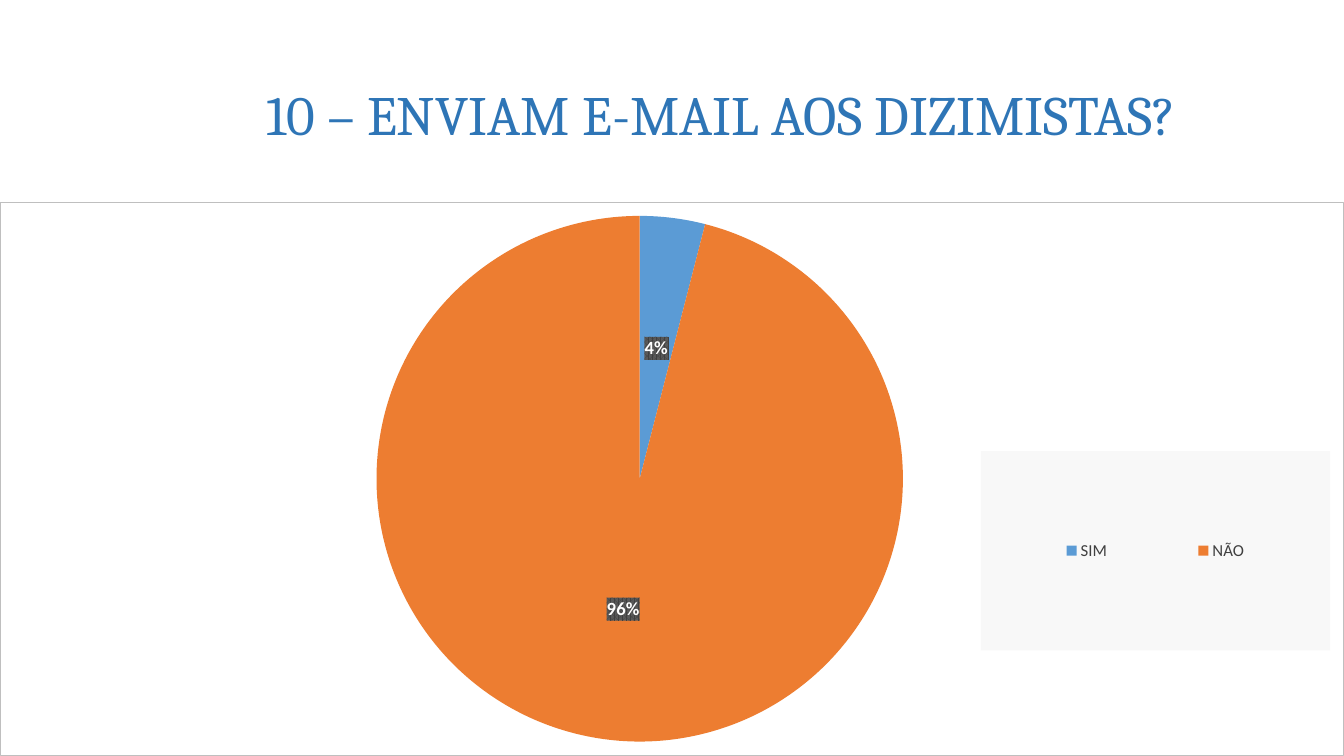
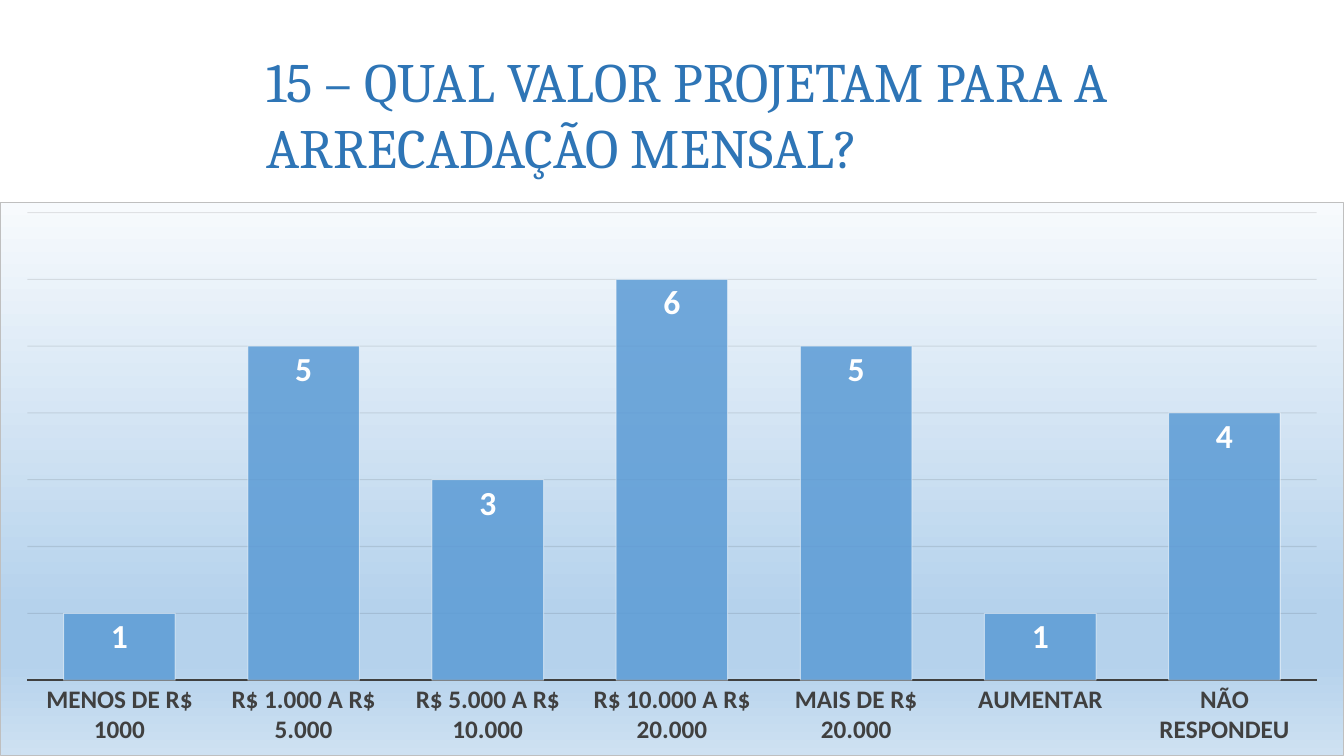
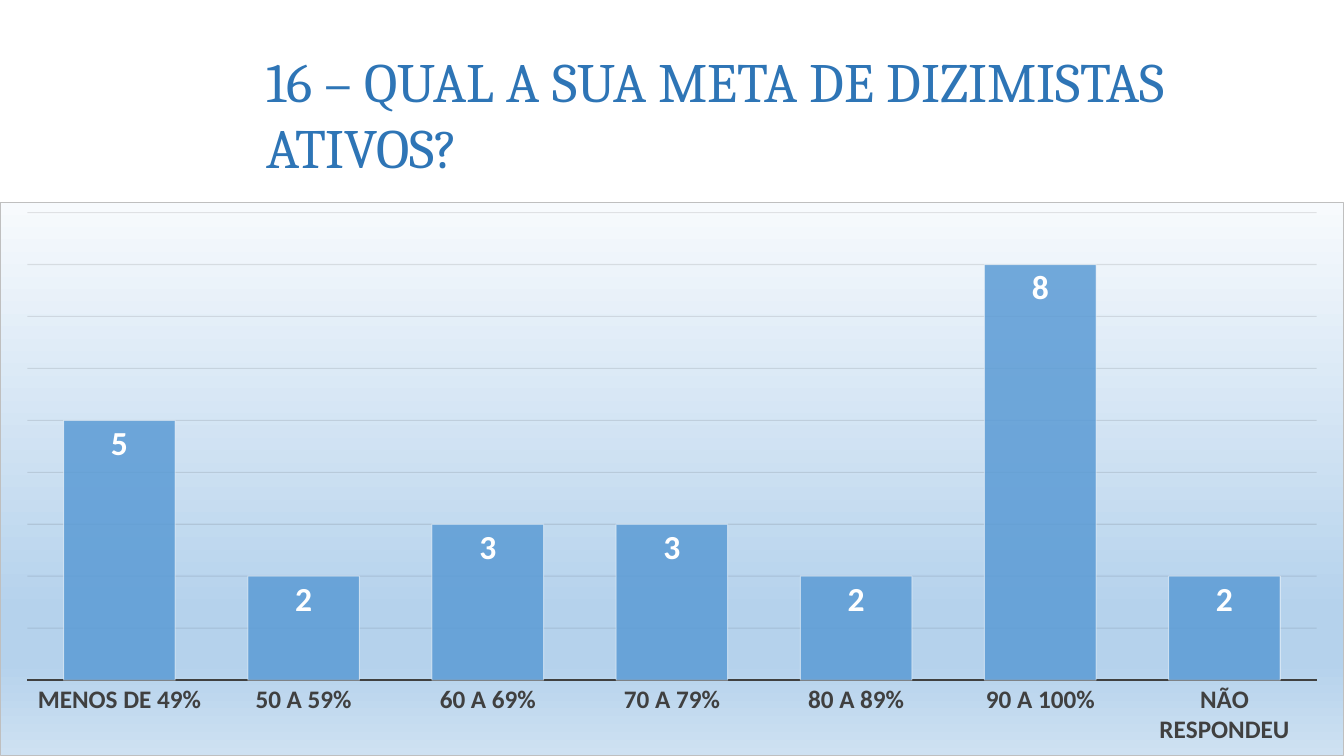
from dataclasses import dataclass

from pptx import Presentation
from pptx.chart.chart import Chart
from pptx.chart.data import CategoryChartData
from pptx.dml.color import RGBColor
from pptx.enum import chart as ch, text
from pptx.oxml import parse_xml
from pptx.oxml.ns import nsdecls
from pptx.slide import Slide
from pptx.util import Inches, Pt

BODY, HEAD = "Calibri", "Cambria"
TITLE, BLUE, ORANGE = "2E75B6", "5B9BD5", "ED7D31"
WHITE, BLACK, DARK, EDGE = "FFFFFF", "000000", "404040", "BFBFBF"
STOPS = [(0, "F7FAFD"), (74, "B5D2EC"), (83, "B5D2EC"), (100, "CEE1F2")]


@dataclass
class Survey:
    title: str
    kind: ch.XL_CHART_TYPE
    data: dict[str, int]


PIE, BARS = ch.XL_CHART_TYPE.PIE, ch.XL_CHART_TYPE.COLUMN_CLUSTERED
SURVEYS = [
    Survey("10 – ENVIAM E-MAIL AOS DIZIMISTAS?", PIE, {"SIM": 4, "NÃO": 96}),
    Survey("15 – QUAL VALOR PROJETAM PARA A ARRECADAÇÃO MENSAL?", BARS, {
        "MENOS DE R$ 1000": 1, "R$ 1.000 A R$ 5.000": 5,
        "R$ 5.000 A R$ 10.000": 3, "R$ 10.000 A R$ 20.000": 6,
        "MAIS DE R$ 20.000": 5, "AUMENTAR": 1, "NÃO RESPONDEU": 4}),
    Survey("16 – QUAL A SUA META DE DIZIMISTAS ATIVOS?", BARS, {
        "MENOS DE 49%": 5, "50 A 59%": 2, "60 A 69%": 3, "70 A 79%": 3,
        "80 A 89%": 2, "90 A 100%": 8, "NÃO RESPONDEU": 2}),
]


def rgb(code: str) -> RGBColor:
    return RGBColor.from_string(code)


def style(font, size: float, color: str, bold: bool = False, face: str = BODY) -> None:
    font.size, font.name, font.bold = Pt(size), face, bold
    font.color.rgb = rgb(color)


def rule(line, color: str, width: float) -> None:
    line.color.rgb, line.width = rgb(color), Pt(width)


def hue(code: str, alpha: int = 100) -> str:
    return f'<a:srgbClr val="{code}"><a:alpha val="{alpha * 1000}"/></a:srgbClr>'


def solid(code: str, alpha: int = 100) -> str:
    return f"<a:solidFill>{hue(code, alpha)}</a:solidFill>"


def props(inner: str):
    return parse_xml(f'<c:spPr {nsdecls("c", "a")}>{inner}</c:spPr>')


def fade(chart: Chart, query: str, alpha: int) -> None:
    """Make the colours found by the query partly transparent."""
    for node in chart.element.xpath(query):
        node.append(parse_xml(f'<a:alpha {nsdecls("a")} val="{alpha * 1000}"/>'))


def layout(x: float, y: float, w: float, h: float, inner: bool = False):
    """Place a chart part by shares of the chart's size."""
    target = '<c:layoutTarget val="inner"/>' if inner else ""
    spots = "".join(f'<c:{k} val="{v}"/>' for k, v in zip("xywh", (x, y, w, h)))
    return parse_xml(
        f'<c:layout {nsdecls("c")}><c:manualLayout>{target}<c:xMode val="edge"/>'
        f'<c:yMode val="edge"/>{spots}</c:manualLayout></c:layout>')


def frame(chart: Chart, fill: str, *area: float) -> None:
    """Fill and outline the chart and place its plot area."""
    edge = f'<a:ln w="{Pt(0.75)}">{solid(EDGE)}</a:ln>'
    chart.element.xpath("c:chart")[0].addnext(props(fill + edge))
    plot = chart.element.xpath("c:chart/c:plotArea")[0]
    for old in plot.xpath("c:layout"):
        plot.remove(old)
    plot.insert(0, layout(*area, inner=True))


def label(chart: Chart, size: float, spot: ch.XL_LABEL_POSITION):
    plot = chart.plots[0]
    plot.has_data_labels = True
    labels = plot.data_labels
    style(labels.font, size, WHITE, True)
    labels.position = spot
    return labels


def draw_pie(chart: Chart) -> None:
    chart.plots[0].vary_by_categories = True
    for i, color in enumerate((BLUE, ORANGE)):
        fill = chart.series[0].points[i].format.fill
        fill.solid()
        fill.fore_color.rgb = rgb(color)
    labels = label(chart, 13.3, ch.XL_LABEL_POSITION.CENTER)
    labels.show_percentage, labels.show_value = True, False
    labels.number_format, labels.number_format_is_linked = "0%", False
    chart.element.xpath("//c:dLbls/c:txPr")[0].addprevious(props(
        f'<a:pattFill prst="pct75"><a:fgClr>{hue(DARK)}</a:fgClr>'
        f'<a:bgClr>{hue("595959")}</a:bgClr></a:pattFill>'))
    chart.has_legend = True
    legend = chart.legend
    legend.position = ch.XL_LEGEND_POSITION.RIGHT
    legend.include_in_layout = False
    style(legend.font, 12, DARK)
    key = chart.element.xpath("//c:legend")[0]
    key.xpath("c:legendPos")[0].addnext(layout(0.73, 0.45, 0.26, 0.36))
    key.xpath("c:txPr")[0].addprevious(props(solid("F2F2F2", 50)))
    frame(chart, solid(WHITE), 0.28, 0.025, 0.392, 0.95)


def draw_bars(chart: Chart, top: int) -> None:
    chart.has_legend = False
    plot, bars = chart.plots[0], chart.series[0]
    plot.gap_width, plot.vary_by_categories = 65, False
    bars.format.fill.solid()
    bars.format.fill.fore_color.rgb = rgb(BLUE)
    rule(bars.format.line, WHITE, 0.75)
    label(chart, 24, ch.XL_LABEL_POSITION.INSIDE_END).show_value = True
    cats, vals = chart.category_axis, chart.value_axis
    cats.major_tick_mark = ch.XL_TICK_MARK.NONE
    style(cats.tick_labels.font, 18, DARK, True)
    rule(cats.format.line, DARK, 1.5)
    vals.visible, vals.has_major_gridlines = False, True
    vals.minimum_scale, vals.maximum_scale, vals.major_unit = 0, top, 1
    rule(vals.major_gridlines.format.line, "0D0D0D", 0.75)
    fade(chart, "//c:ser/c:spPr/a:solidFill/a:srgbClr", 85)
    fade(chart, "//c:ser/c:spPr/a:ln//a:srgbClr", 50)
    fade(chart, "//c:majorGridlines//a:srgbClr", 10)
    stops = "".join(f'<a:gs pos="{at * 1000}">{hue(c)}</a:gs>' for at, c in STOPS)
    frame(chart, f'<a:gradFill><a:gsLst>{stops}</a:gsLst><a:lin ang="5400000" '
          'scaled="0"/></a:gradFill>', 0.02, 0.019, 0.96, 0.845)


def add_title(slide: Slide, words: str) -> None:
    box = slide.shapes.title
    box.left, box.top = Inches(2.54), Inches(0.4)
    box.width, box.height = Inches(9.88), Inches(1.45)
    body = box.text_frame
    body.word_wrap, body.auto_size = True, text.MSO_AUTO_SIZE.NONE
    body.vertical_anchor = text.MSO_ANCHOR.MIDDLE
    para = body.paragraphs[0]
    para.alignment = text.PP_ALIGN.LEFT
    run = para.add_run()
    run.text = words
    style(run.font, 39.6, TITLE, face=HEAD)


def add_chart(slide: Slide, survey: Survey) -> None:
    data = CategoryChartData()
    data.categories = list(survey.data)
    data.add_series("Series 1", list(survey.data.values()))
    chart = slide.shapes.add_chart(
        survey.kind, 0, Inches(2), Inches(13.33), Inches(5.5), data).chart
    chart.has_title = False
    style(chart.font, 10, BLACK)
    if survey.kind == PIE:
        draw_pie(chart)
    else:
        draw_bars(chart, max(survey.data.values()) + 1)


def main() -> None:
    deck = Presentation()
    deck.slide_width, deck.slide_height = Inches(13.33), Inches(7.5)
    for survey in SURVEYS:
        slide = deck.slides.add_slide(deck.slide_layouts[5])
        add_title(slide, survey.title)
        add_chart(slide, survey)
    deck.save("out.pptx")


if __name__ == "__main__":
    main()
